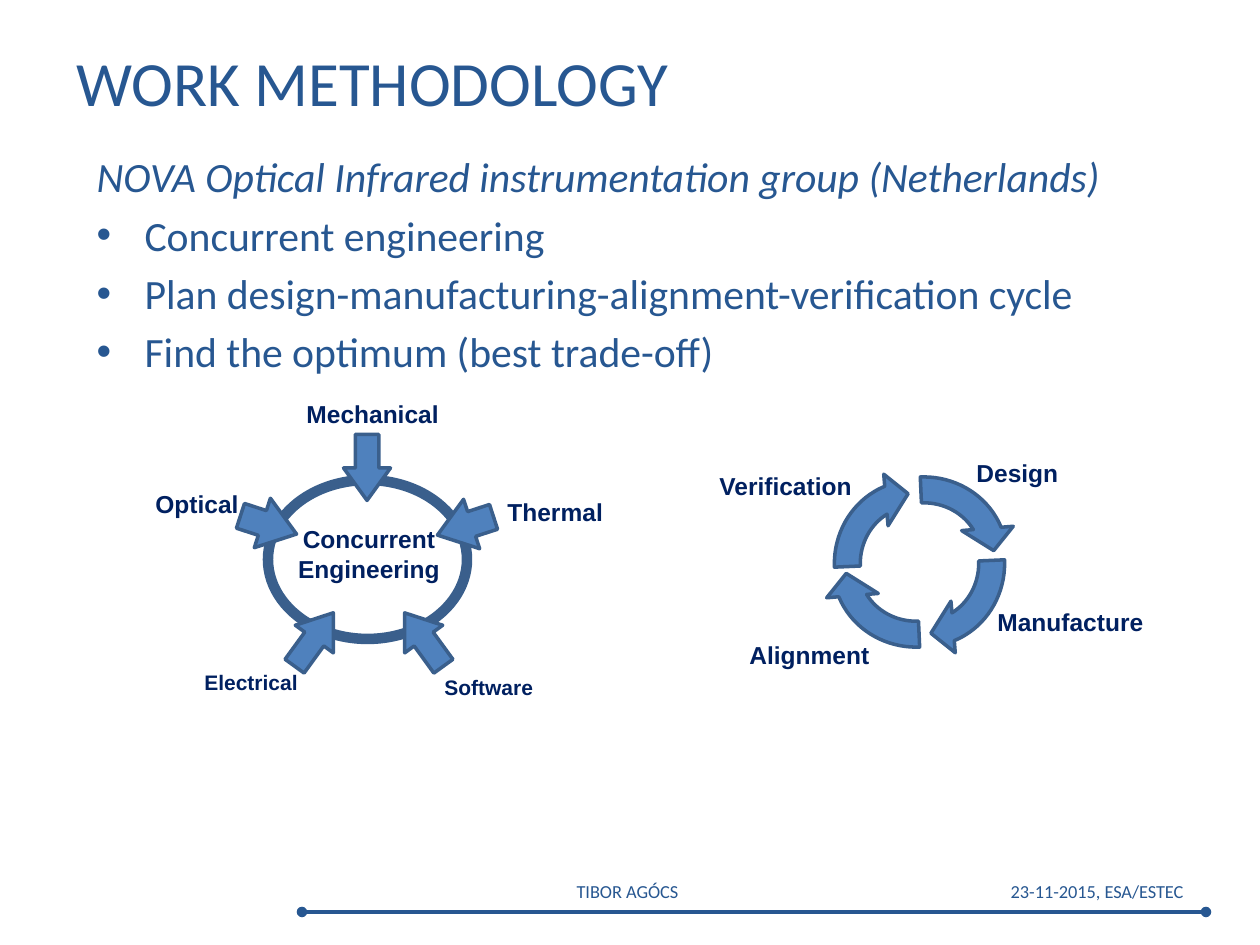
from dataclasses import dataclass
from typing import Any

from lxml.etree import SubElement
from pptx import Presentation
from pptx.dml.color import RGBColor
from pptx.enum.shapes import MSO_CONNECTOR as Link, MSO_SHAPE as Kind
from pptx.enum.text import MSO_ANCHOR as Anchor, MSO_AUTO_SIZE as Fit, PP_ALIGN as Align
from pptx.oxml.ns import qn
from pptx.util import Pt

SCALE = 914400 / 126  # EMU in one px
BLUE, NAVY, FILL, EDGE = "275791", "002060", "4F81BD", "3A5F8C"

BODY = {"name": "Calibri", "size": Pt(23.8)}
HEAD = {"name": "Calibri", "size": Pt(36)}
FOOT = {"name": "Calibri", "size": Pt(10.5)}
BOLD = {"name": "Arial", "size": Pt(14), "bold": True}
SMALL = BOLD | {"size": Pt(12)}


@dataclass
class Box:
    x: int
    y: int
    w: int
    h: int

    def emu(self) -> list[int]:
        return [px(n) for n in (self.x, self.y, self.w, self.h)]


@dataclass
class Label:
    text: str
    box: Box
    font: dict[str, Any]
    align: Any = Align.LEFT
    color: str = NAVY
    wrap: bool = False


@dataclass
class Arrow:
    box: Box
    turn: int


def px(n: int) -> int:
    return round(n * SCALE)


def rgb(code: str) -> RGBColor:
    return RGBColor.from_string(code)


def apply(item: Any, form: dict[str, Any]) -> None:
    for key, value in form.items():
        setattr(item, key, value)


def style(par: Any, font: dict[str, Any], color: str) -> None:
    for run in par.runs:
        apply(run.font, font)
        run.font.color.rgb = rgb(color)


def place(shape: Any, box: Box) -> None:
    apply(shape, dict(zip(("left", "top", "width", "height"), box.emu())))


def write(shapes: Any, label: Label) -> None:
    frame = shapes.add_textbox(*label.box.emu()).text_frame
    frame.text = label.text
    apply(frame, {"word_wrap": label.wrap, "auto_size": Fit.SHAPE_TO_FIT_TEXT})
    for par in frame.paragraphs:
        par.alignment = label.align
        style(par, label.font, label.color)


def draw(shapes: Any, kind: Any, arrow: Arrow, adj: tuple = (),
         fill: str | None = FILL, width: int = 2) -> None:
    shape = shapes.add_shape(kind, *arrow.box.emu())
    shape.shadow.inherit = False
    shape.rotation = arrow.turn
    for i, value in enumerate(adj):
        shape.adjustments[i] = value
    if fill:
        shape.fill.solid()
        shape.fill.fore_color.rgb = rgb(fill)
    else:
        shape.fill.background()
    shape.line.color.rgb = rgb(EDGE)
    shape.line.width = Pt(width)


def rule(shapes: Any, x1: int, x2: int, y: int) -> None:
    line = shapes.add_connector(Link.STRAIGHT, px(x1), px(y), px(x2), px(y))
    line.line.color.rgb = rgb(BLUE)
    line.line.width = Pt(2)
    for tag in ("a:headEnd", "a:tailEnd"):
        SubElement(line.line._get_or_add_ln(), qn(tag), type="oval")
    SubElement(line._element.spPr, qn("a:effectLst"))


def bullet(par: Any, mark: str, indent: int) -> None:
    props = par._p.get_or_add_pPr()
    props.set("marL", str(px(indent)))
    props.set("indent", str(-px(indent)))
    if mark:
        SubElement(props, qn("a:buFont"), typeface="Arial")
        SubElement(props, qn("a:buChar"), char=mark)
    else:
        SubElement(props, qn("a:buNone"))


FOOTER = [
    Label("TIBOR AGÓCS", Box(60, 874, 1135, 35), FOOT, Align.CENTER, BLUE, True),
    Label("23-11-2015, ESA/ESTEC", Box(748, 874, 448, 35), FOOT, Align.RIGHT, BLUE, True),
]
LINES = [
    "NOVA Optical Infrared instrumentation group (Netherlands)",
    "Concurrent engineering",
    "Plan design-manufacturing-alignment-verification cycle",
    "Find the optimum (best trade-off)",
]
FIELDS = [
    Label("Concurrent\nEngineering", Box(285, 518, 168, 72), BOLD, Align.CENTER),
    Label("Optical", Box(143, 483, 114, 43), BOLD),
    Label("Mechanical", Box(294, 393, 159, 43), BOLD),
    Label("Thermal", Box(495, 491, 122, 43), BOLD),
    Label("Electrical", Box(192, 663, 120, 38), SMALL),
    Label("Software", Box(432, 668, 115, 38), SMALL),
]
INPUTS = [
    Arrow(Box(334, 444, 66, 47), 90),
    Arrow(Box(239, 499, 59, 52), 18),
    Arrow(Box(281, 616, 66, 47), 306),
    Arrow(Box(391, 616, 66, 47), 234),
    Arrow(Box(436, 500, 59, 52), 162),
]
STAGES = [
    Label("Design", Box(964, 452, 108, 43), BOLD),
    Label("Manufacture", Box(985, 601, 172, 43), BOLD),
    Label("Alignment", Box(737, 634, 147, 43), BOLD),
    Label("Verification", Box(707, 465, 160, 43), BOLD),
]
TURNS = [
    Arrow(Box(x, y, 192, 185), 90 * i)
    for i, (x, y) in enumerate([(828, 464), (829, 471), (820, 475), (818, 471)])
]


def main() -> None:
    deck = Presentation()
    apply(deck, {"slide_width": px(1260), "slide_height": px(945)})
    slide = deck.slides.add_slide(deck.slide_layouts[1])
    shapes = slide.shapes

    # Title
    title = shapes.title
    place(title, Box(64, 38, 1133, 87))
    title.text_frame.text = "WORK METHODOLOGY"
    apply(title.text_frame, {"vertical_anchor": Anchor.MIDDLE, "auto_size": Fit.NONE})
    title.text_frame.paragraphs[0].alignment = Align.LEFT
    style(title.text_frame.paragraphs[0], HEAD, BLUE)

    # Body list, led by a line without a bullet
    body = slide.placeholders[1]
    place(body, Box(84, 145, 1071, 255))
    body.text_frame.text = "\n".join(LINES)
    body.text_frame.auto_size = Fit.NONE
    for i, par in enumerate(body.text_frame.paragraphs):
        bullet(par, "•" if i else "", 48 if i else 0)
        style(par, BODY | {"italic": i == 0}, BLUE)

    # Footer
    for label in FOOTER:
        write(shapes, label)
    rule(shapes, 302, 1206, 912)

    # Fields that feed concurrent engineering
    team = shapes.add_group_shape().shapes
    draw(team, Kind.OVAL, Arrow(Box(268, 480, 199, 159), 0), fill=None, width=6)
    for label in FIELDS:
        write(team, label)
    for arrow in INPUTS:
        draw(team, Kind.RIGHT_ARROW, arrow, (0.5, 0.69))

    # Design cycle
    cycle = shapes.add_group_shape().shapes
    for arrow in TURNS:
        draw(cycle, Kind.CIRCULAR_ARROW, arrow, (0.14, 11.42, 201.71, 160.44, 0.14))
    for label in STAGES:
        write(cycle, label)

    deck.save("out.pptx")


if __name__ == "__main__":
    main()
